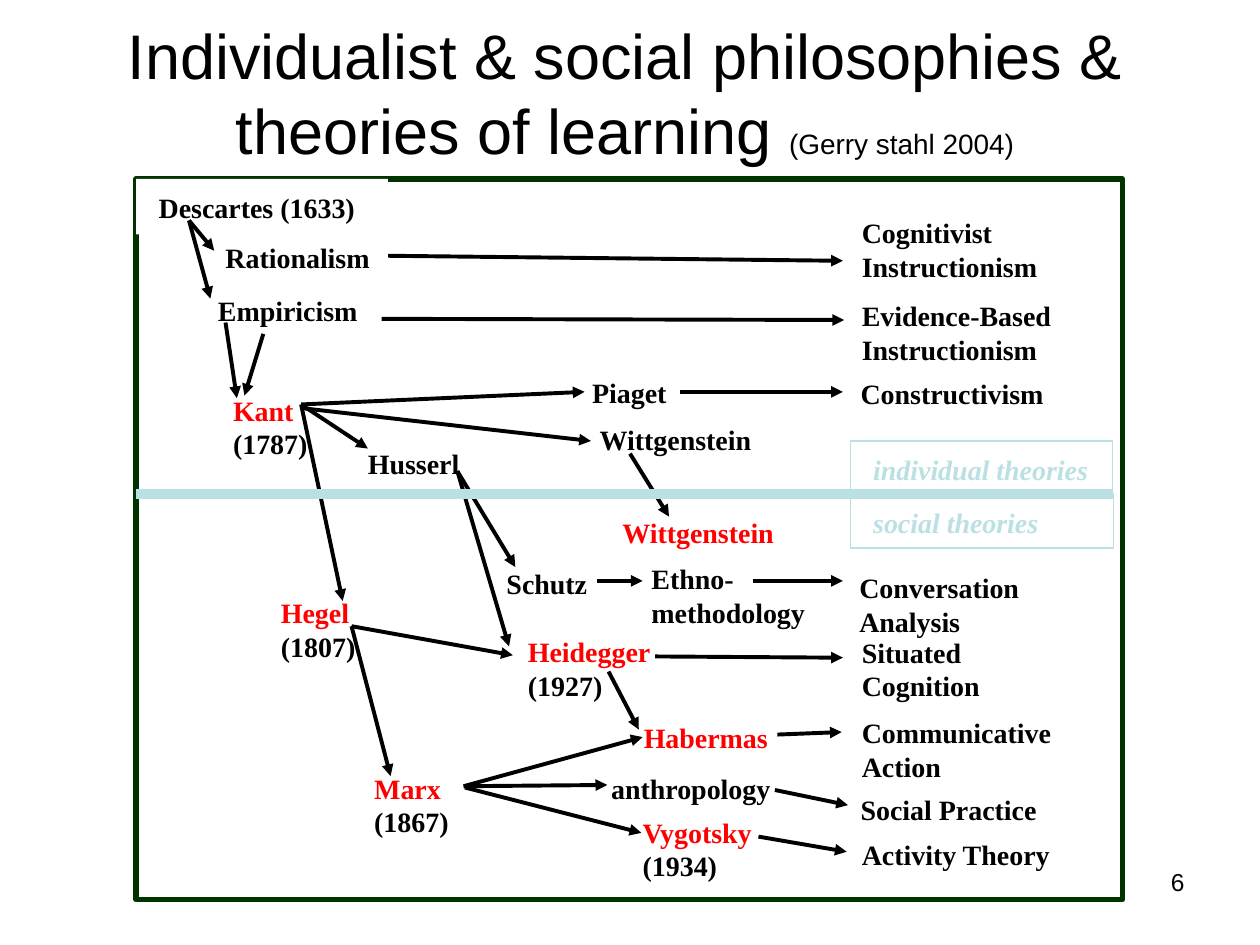
from lxml import etree
from pptx import Presentation
from pptx.dml.color import RGBColor
from pptx.enum.shapes import MSO_CONNECTOR, MSO_SHAPE
from pptx.enum.text import MSO_ANCHOR, PP_ALIGN
from pptx.oxml.ns import qn
from pptx.util import Pt

EMU_PER_PX = 9144
RECTANGLE = MSO_SHAPE.RECTANGLE
STRAIGHT = MSO_CONNECTOR.STRAIGHT
TOP, MIDDLE = MSO_ANCHOR.TOP, MSO_ANCHOR.MIDDLE
LEFT, CENTER, RIGHT = PP_ALIGN.LEFT, PP_ALIGN.CENTER, PP_ALIGN.RIGHT
SANS, SERIF = "Arial", "Times New Roman"
COLORS = {
    "ink": "000000",
    "red": "FF0000",
    "paper": "FFFFFF",
    "frame": "003300",
    "pale": "BBE0E3",
}

THEORY_LABELS = [
    ("Activity Theory", "", "ink", (558, 514, 195, 48)),
    ("social theories", "", "pale", (567, 250, 209, 43)),
    ("Husserl", "", "ink", (166, 203, 116, 38)),
    ("Hegel", " (1807)", "red", (97, 322, 96, 73)),
    ("Kant", " (1787)", "red", (59, 161, 97, 65)),
    ("Marx", " (1867)", "red", (171, 461, 95, 73)),
    ("Heidegger", " (1927)", "red", (293, 353, 139, 66)),
    ("Schutz", "", "ink", (276, 299, 117, 51)),
    ("Piaget", "", "ink", (344, 147, 106, 44)),
    ("Vygotsky", " (1934)", "red", (384, 496, 145, 70)),
    ("Habermas", "", "red", (385, 421, 140, 48)),
    ("Situated Cognition", "", "ink", (558, 353, 198, 69)),
    ("Constructivism", "", "ink", (557, 148, 185, 44)),
    ("Evidence-Based Instructionism", "", "ink", (558, 86, 190, 76)),
    ("Ethno-methodology", "", "ink", (391, 295, 161, 68)),
    ("Communicative Action", "", "ink", (558, 417, 201, 68)),
    ("Conversation Analysis", "", "ink", (556, 302, 168, 65)),
    ("Cognitivist Instructionism", "", "ink", (558, 20, 182, 70)),
    ("Wittgenstein", "", "ink", (350, 184, 158, 44)),
    ("Wittgenstein", "", "red", (368, 258, 159, 44)),
    ("Social Practice", "", "ink", (557, 478, 198, 40)),
    ("anthropology", "", "ink", (359, 461, 165, 43)),
    ("individual theories", "", "pale", (567, 208, 208, 43)),
]
THEORY_ARROWS = [
    (131, 179, 184, 214), (131, 179, 164, 335), (131, 179, 356, 169),
    (132, 182, 361, 208), (255, 232, 301, 308), (255, 232, 296, 371),
    (366, 319, 402, 319), (490, 319, 561, 319), (171, 355, 299, 378),
    (171, 355, 202, 474), (261, 483, 401, 519), (260, 482, 402, 443),
    (260, 482, 374, 481), (175, 111, 562, 112), (432, 169, 561, 169),
    (392, 218, 423, 268), (412, 379, 561, 380), (375, 391, 399, 437),
    (509, 441, 560, 439), (507, 485, 565, 497), (494, 522, 564, 534),
]
ROOT_LABELS = [
    ("Descartes (1633)", "", "ink", (0, 0, 200, 44)),
    ("Rationalism", "", "ink", (53, 40, 156, 44)),
    ("Empiricism", "", "ink", (47, 82, 148, 44)),
]
ROOT_ARROWS = [
    (42, 33, 62, 57), (42, 33, 59, 95), (101, 123, 86, 172),
    (71, 114, 80, 174), (200, 61, 561, 65),
]


def px(*lengths):
    """Turn px lengths into a list of EMU."""
    return [length * EMU_PER_PX for length in lengths]


def color(name):
    """Look up a named colour."""
    return RGBColor.from_string(COLORS[name])


def write(shape, pieces, font_name, align, anchor, bold=False, italic=False):
    """Fill a shape with one paragraph of (text, size, colour) pieces."""
    frame = shape.text_frame
    frame.word_wrap = True
    frame.vertical_anchor = anchor
    paragraph = frame.paragraphs[0]
    paragraph.alignment = align
    for text, size, ink in pieces:
        run = paragraph.add_run()
        run.text = text
        run.font.name = font_name
        run.font.size = Pt(size)
        run.font.bold = bold
        run.font.italic = italic
        run.font.color.rgb = color(ink)


def add_panel(slide, box, line=None, width=0.75):
    """Add a white rectangle with an optional outline."""
    shape = slide.shapes.add_shape(RECTANGLE, *px(*box))
    shape.shadow.inherit = False
    shape.fill.solid()
    shape.fill.fore_color.rgb = color("paper")
    if line:
        shape.line.color.rgb = color(line)
        shape.line.width = Pt(width)
    else:
        shape.line.fill.background()
    return shape


def add_label(slide, origin, text, year, ink, box):
    """Add a bold label, with an optional year, relative to the origin."""
    left, top, width, height = box
    pale = ink == "pale"
    shape = add_panel(slide, (origin[0] + left, origin[1] + top, width, height),
                      "pale" if pale else None)
    frame = shape.text_frame
    (frame.margin_left, frame.margin_top,
     frame.margin_right, frame.margin_bottom) = px(18, 9, 15, 9)
    pieces = [(text, 16, ink)]
    if year:
        pieces.append((year, 16, "ink"))
    write(shape, pieces, SERIF, LEFT, TOP, True, pale)


def add_line(slide, origin, ends, ink="ink", width=2.25, arrow=True):
    """Add a straight line relative to the origin, with an arrowhead if asked."""
    x, y = origin
    start_x, start_y, end_x, end_y = ends
    connector = slide.shapes.add_connector(
        STRAIGHT, *px(x + start_x, y + start_y, x + end_x, y + end_y))
    connector.line.color.rgb = color(ink)
    connector.line.width = Pt(width)
    if arrow:
        line = connector.line._get_or_add_ln()
        etree.SubElement(line, qn("a:tailEnd"), type="triangle")
    etree.SubElement(connector._element.spPr, qn("a:effectLst"))


def add_title(slide, box):
    """Add the centred title with its small citation."""
    shape = slide.shapes.add_textbox(*px(*box))
    pieces = [
        ("Individualist & social philosophies & theories of learning ", 36, "ink"),
        ("(Gerry stahl 2004)", 16, "ink"),
    ]
    write(shape, pieces, SANS, CENTER, MIDDLE)


def add_page_number(slide, box):
    """Add the page number."""
    shape = slide.shapes.add_textbox(*px(*box))
    write(shape, [("6", 14, "ink")], SANS, RIGHT, TOP)


def add_diagram(slide, box):
    """Add the framed map of philosophies and theories."""
    origin = box[:2]
    add_panel(slide, box, "frame", 3)
    for labels, arrows in ((THEORY_LABELS, THEORY_ARROWS),
                           (ROOT_LABELS, ROOT_ARROWS)):
        for label in labels:
            add_label(slide, origin, *label)
        for ends in arrows:
            add_line(slide, origin, ends)
    add_line(slide, origin, (0, 250, 775, 250), "pale", 6, False)


def main():
    """Build and save the presentation."""
    presentation = Presentation()
    presentation.slide_width, presentation.slide_height = px(1000, 750)
    slide = presentation.slides.add_slide(presentation.slide_layouts[6])
    add_page_number(slide, (717, 683, 233, 52))
    add_title(slide, (75, 21, 842, 104))
    add_diagram(slide, (108, 142, 783, 572))
    presentation.save("out.pptx")


if __name__ == "__main__":
    main()
